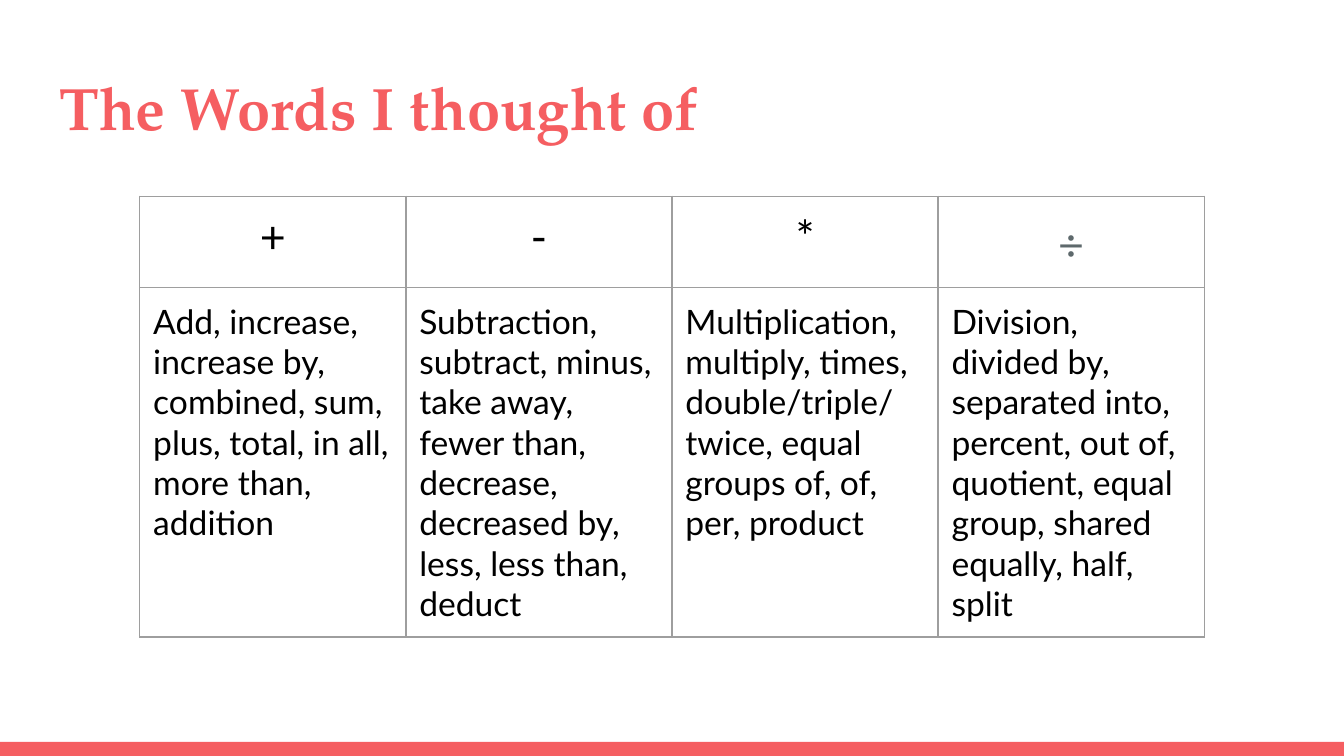
from dataclasses import dataclass

from lxml import etree
from pptx import Presentation
from pptx.dml import color
from pptx.enum import shapes, text
from pptx.oxml import ns
from pptx.util import Inches, Pt


@dataclass
class Topic:
    sign: str
    words: list[str]
    tint: str = "000000"


TOPICS = [
    Topic("+", ["Add, increase, increase by, combined, sum, plus, total, in all, more than, addition"]),
    Topic("-", ["Subtraction, subtract, minus, take away, fewer than, decrease, decreased by, "
                "less, less than, deduct"]),
    Topic("*", ["Multiplication, multiply, times, double/triple/",
                "twice, equal groups of, of, per, product"]),
    Topic("÷", ["Division, divided by, separated into, percent, out of, quotient, equal group, "
                "shared equally, half, split"], "5E696C"),
]
CORAL = "F55E61"
GREY = "9E9E9E"
PAD = Inches(0.1)


def rgb(code: str) -> color.RGBColor:
    return color.RGBColor.from_string(code)


def style(font, face: str, size: int, tint: str) -> None:
    font.name = face
    font.size = Pt(size)
    font.color.rgb = rgb(tint)


def pad(box) -> None:
    box.margin_left = box.margin_right = box.margin_top = box.margin_bottom = PAD


def border(cell) -> None:
    props = cell._tc.get_or_add_tcPr()
    for spot, side in enumerate(("lnL", "lnR", "lnT", "lnB")):
        line = etree.Element(ns.qn(f"a:{side}"), w=str(Pt(0.75)))
        fill = etree.SubElement(line, ns.qn("a:solidFill"))
        etree.SubElement(fill, ns.qn("a:srgbClr"), val=GREY)
        props.insert(spot, line)


def write(cell, lines: list[str], size: int, tint: str) -> None:
    pad(cell)
    cell.fill.background()
    border(cell)
    cell.text = "\n".join(lines)
    for para in cell.text_frame.paragraphs:
        style(para.font, "Lato", size, tint)


def add_title(slide) -> None:
    title = slide.shapes.title
    title.left, title.top = Inches(0.34), Inches(0.43)
    title.width, title.height = Inches(9.32), Inches(0.68)
    frame = title.text_frame
    frame.text = "The Words I thought of"
    frame.word_wrap = True
    frame.auto_size = text.MSO_AUTO_SIZE.NONE
    frame.vertical_anchor = text.MSO_ANCHOR.TOP
    pad(frame)
    para = frame.paragraphs[0]
    para.alignment = text.PP_ALIGN.LEFT
    style(para.font, "TeX Gyre Pagella", 32, CORAL)
    para.font.bold = True


def add_bar(slide) -> None:
    bar = slide.shapes.add_shape(shapes.MSO_SHAPE.RECTANGLE, 0, Inches(5.52), Inches(10), Inches(0.11))
    bar.shadow.inherit = False
    bar.fill.solid()
    bar.fill.fore_color.rgb = rgb(CORAL)
    bar.line.fill.background()


def add_grid(slide) -> None:
    grid = slide.shapes.add_table(
        2, len(TOPICS), Inches(1.04), Inches(1.46), Inches(7.92), Inches(3.28)
    ).table
    grid.first_row = grid.horz_banding = False
    grid.rows[0].height = Inches(0.68)
    grid.rows[1].height = Inches(2.6)
    for col, topic in enumerate(TOPICS):
        head = grid.cell(0, col)
        write(head, [topic.sign], 24, topic.tint)
        head.text_frame.paragraphs[0].alignment = text.PP_ALIGN.CENTER
        write(grid.cell(1, col), topic.words, 18, "000000")
    last = grid.cell(0, len(TOPICS) - 1).text_frame.paragraphs[0]
    last.line_spacing = 1.15
    last.space_after = Pt(16)


def main() -> None:
    deck = Presentation()
    deck.slide_width = Inches(10)
    deck.slide_height = deck.slide_width * 9 // 16
    slide = deck.slides.add_slide(deck.slide_layouts[5])
    add_bar(slide)
    add_title(slide)
    add_grid(slide)
    deck.save("out.pptx")


if __name__ == "__main__":
    main()
